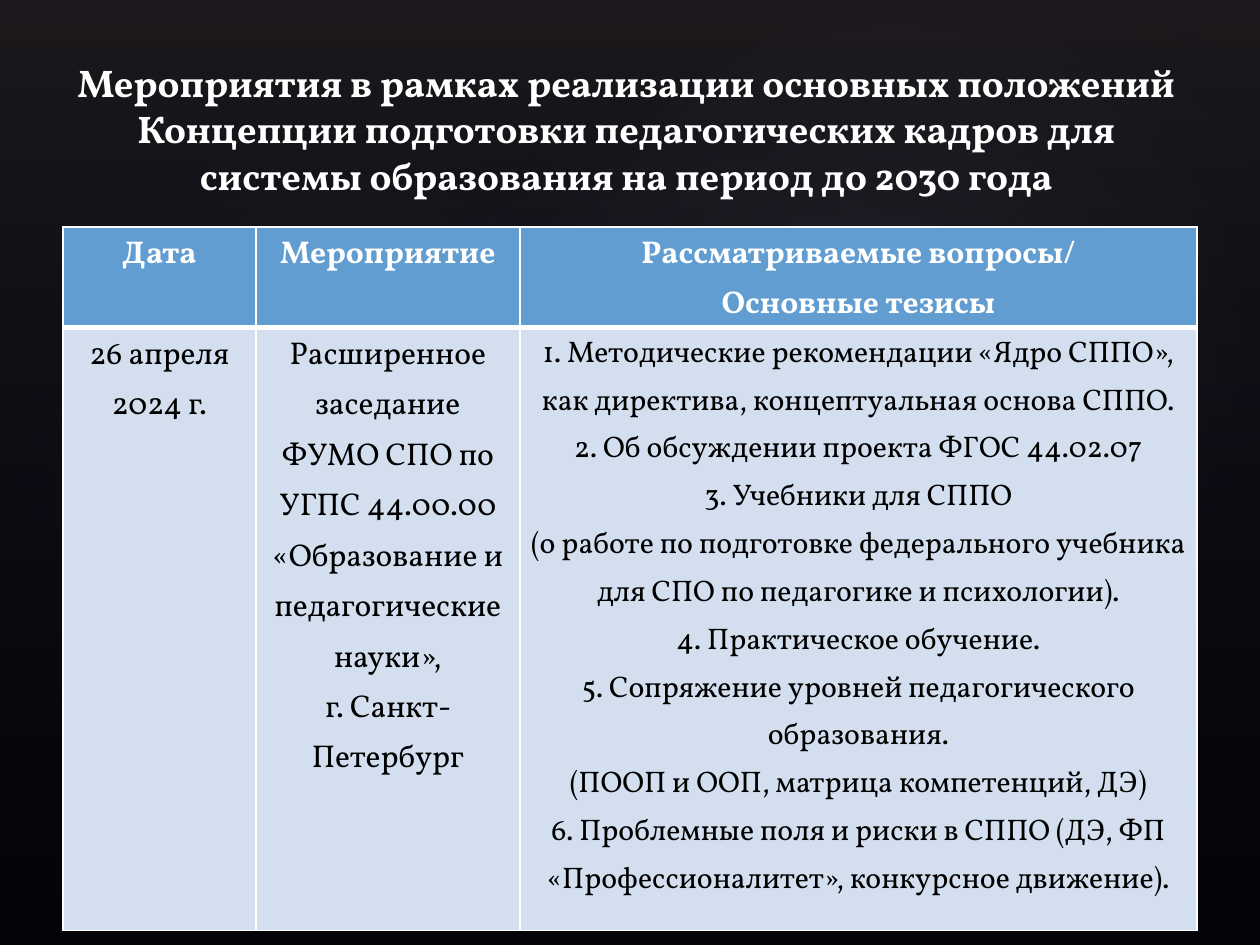
import lxml.etree
import pptx
import pptx.dml.color
import pptx.enum.shapes
import pptx.enum.text
import pptx.oxml
import pptx.oxml.ns
import pptx.util

FONT = "Vollkorn"
WIDE, HIGH = pptx.util.Inches(10), pptx.util.Inches(7.5)
NS = pptx.oxml.ns.nsdecls("a")
SHAPE = pptx.enum.shapes.MSO_SHAPE
CENTER = pptx.enum.text.PP_ALIGN.CENTER
LINEAR = '<a:lin ang="5400000" scaled="0"/>'
RADIAL = ('<a:path path="circle"><a:fillToRect l="50000" t="50000" '
          'r="50000" b="50000"/></a:path>')

GLOWS = [
    ((0.15, 0.152, 0.792, 0.832), 328.7, 7),
    ((-0.03, 0.17, 0.606, 0.653), 294.3, 8),
    ((0.358, 0.017, 0.709, 0.693), 328.7, 8),
]
TITLE = ("Мероприятия в рамках реализации основных положений Концепции "
         "подготовки педагогических кадров для системы образования "
         "на период до 2030 года")
HEADS = [["Дата"], ["Мероприятие"],
         ["Рассматриваемые вопросы/", "Основные тезисы"]]
EVENT = [
    ["26 апреля 2024 г."],
    ["Расширенное заседание ФУМО СПО по УГПС 44.00.00 "
     "«Образование и педагогические науки»,", "г. Санкт-Петербург"],
    ["1. Методические рекомендации «Ядро СППО», как директива, "
     "концептуальная основа СППО.",
     "2. Об обсуждении проекта ФГОС 44.02.07",
     "3. Учебники для СППО",
     "(о работе по подготовке федерального учебника для СПО по "
     "педагогике и психологии).",
     "4. Практическое обучение.",
     "5. Сопряжение уровней педагогического образования.",
     "(ПООП и ООП, матрица компетенций, ДЭ)",
     "6. Проблемные поля и риски в СППО (ДЭ, ФП «Профессионалитет», "
     "конкурсное движение)."],
]


def color(code):
    """Turn a hex string into a colour."""
    return pptx.dml.color.RGBColor.from_string(code)


def place(box):
    """Turn shares of the slide into lengths."""
    x, y, w, h = box
    return int(x * WIDE), int(y * HIGH), int(w * WIDE), int(h * HIGH)


def write(para, text, size, code, bold):
    """Add one centred run to a paragraph."""
    para.alignment = CENTER
    run = para.add_run()
    run.text = text
    run.font.name = FONT
    run.font.size = pptx.util.Pt(size)
    run.font.bold = bold
    run.font.color.rgb = color(code)


def shade(slide, kind, box, stops, way, turn=0):
    """Draw a borderless shape with a translucent gradient."""
    shape = slide.shapes.add_shape(kind, *place(box))
    shape.shadow.inherit = False
    shape.line.fill.background()
    shape.rotation = turn
    marks = "".join(
        f'<a:gs pos="{spot * 1000}"><a:srgbClr val="{code}">'
        f'<a:alpha val="{alpha * 1000}"/></a:srgbClr></a:gs>'
        for spot, code, alpha in stops)
    fill = pptx.oxml.parse_xml(
        f'<a:gradFill {NS} rotWithShape="1"><a:gsLst>{marks}</a:gsLst>'
        f'{way}</a:gradFill>')
    shape.fill.solid()
    props = shape._element.spPr
    old = props.find(pptx.oxml.ns.qn("a:solidFill"))
    props.replace(old, fill)


def backdrop(slide, box):
    """Lay the dark ground and its soft glows."""
    slide.background.fill.solid()
    slide.background.fill.fore_color.rgb = color("000000")
    shade(slide, SHAPE.RECTANGLE, box,
          [(0, "504652", 36), (100, "242852", 10)], LINEAR)
    for spot, turn, alpha in GLOWS:
        shade(slide, SHAPE.OVAL, spot,
              [(0, "C4BCC6", alpha), (58, "242852", 0)], RADIAL, turn)


def heading(slide, box):
    """Set the title above the table."""
    title = slide.shapes.title
    title.left, title.top, title.width, title.height = place(box)
    frame = title.text_frame
    frame.word_wrap = True
    frame.vertical_anchor = pptx.enum.text.MSO_ANCHOR.BOTTOM
    write(frame.paragraphs[0], TITLE, 22, "FFFFFF", True)
    slide.shapes._spTree.append(title._element)


def border(cell, base):
    """Rule a cell in white with a given bottom width."""
    props = cell._tc.get_or_add_tcPr()
    for spot, (side, width) in enumerate(zip("LRTB", (1, 1, 1, base))):
        props.insert(spot, pptx.oxml.parse_xml(
            f'<a:ln{side} {NS} w="{pptx.util.Pt(width)}"><a:solidFill>'
            f'<a:srgbClr val="FFFFFF"/></a:solidFill></a:ln{side}>'))


def fill(cell, lines, size, code, bold, back, base):
    """Fill one cell with its paragraphs."""
    cell.margin_left = cell.margin_right = pptx.util.Inches(0.07)
    cell.margin_top = cell.margin_bottom = 0
    cell.fill.solid()
    cell.fill.fore_color.rgb = color(back)
    border(cell, base)
    frame = cell.text_frame
    for spot, line in enumerate(lines):
        para = frame.add_paragraph() if spot else frame.paragraphs[0]
        para.line_spacing = 1.15
        write(para, line, size, code, bold)


def agenda(slide, box):
    """Build the table of events."""
    x, y, w, h = place(box)
    table = slide.shapes.add_table(2, 3, x, y, w, h).table
    for col, share in zip(table.columns, (0.17, 0.233, 0.597)):
        col.width = int(w * share)
    for row, share in zip(table.rows, (0.13, 0.87)):
        row.height = int(h * share)
    for col, lines in enumerate(HEADS):
        fill(table.cell(0, col), lines, 18, "FFFFFF", True, "629DD1", 3)
    for col, (lines, size) in enumerate(zip(EVENT, (18, 18, 17))):
        fill(table.cell(1, col), lines, size, "000000", False, "D3DFEE", 1)


def main():
    """Build and save the slide."""
    deck = pptx.Presentation()
    deck.slide_width, deck.slide_height = WIDE, HIGH
    slide = deck.slides.add_slide(deck.slide_layouts[5])
    backdrop(slide, (0, 0, 1, 1))
    agenda(slide, (0.05, 0.24, 0.9, 0.733))
    heading(slide, (0.047, 0.041, 0.9, 0.175))
    deck.save("out.pptx")


if __name__ == "__main__":
    main()
